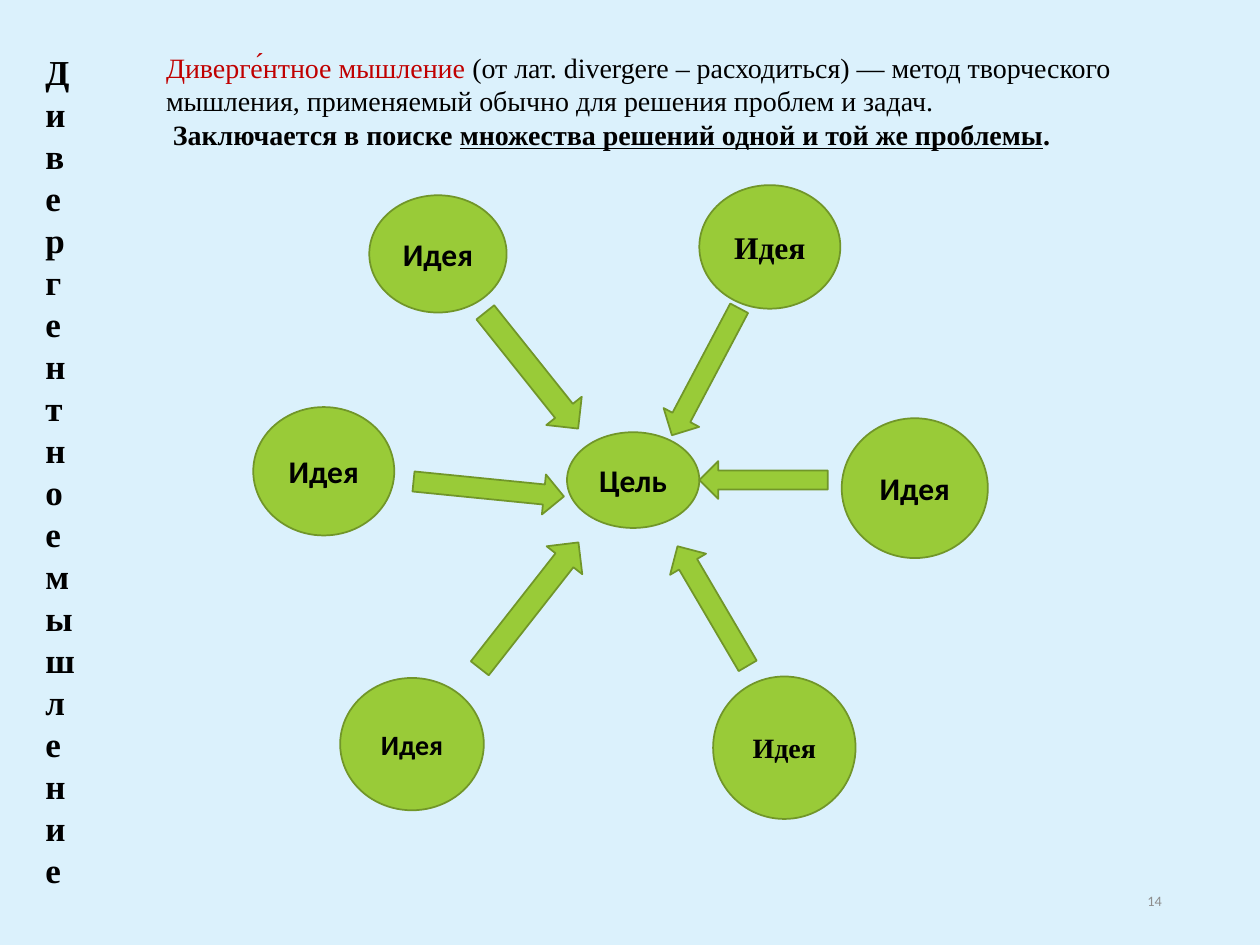
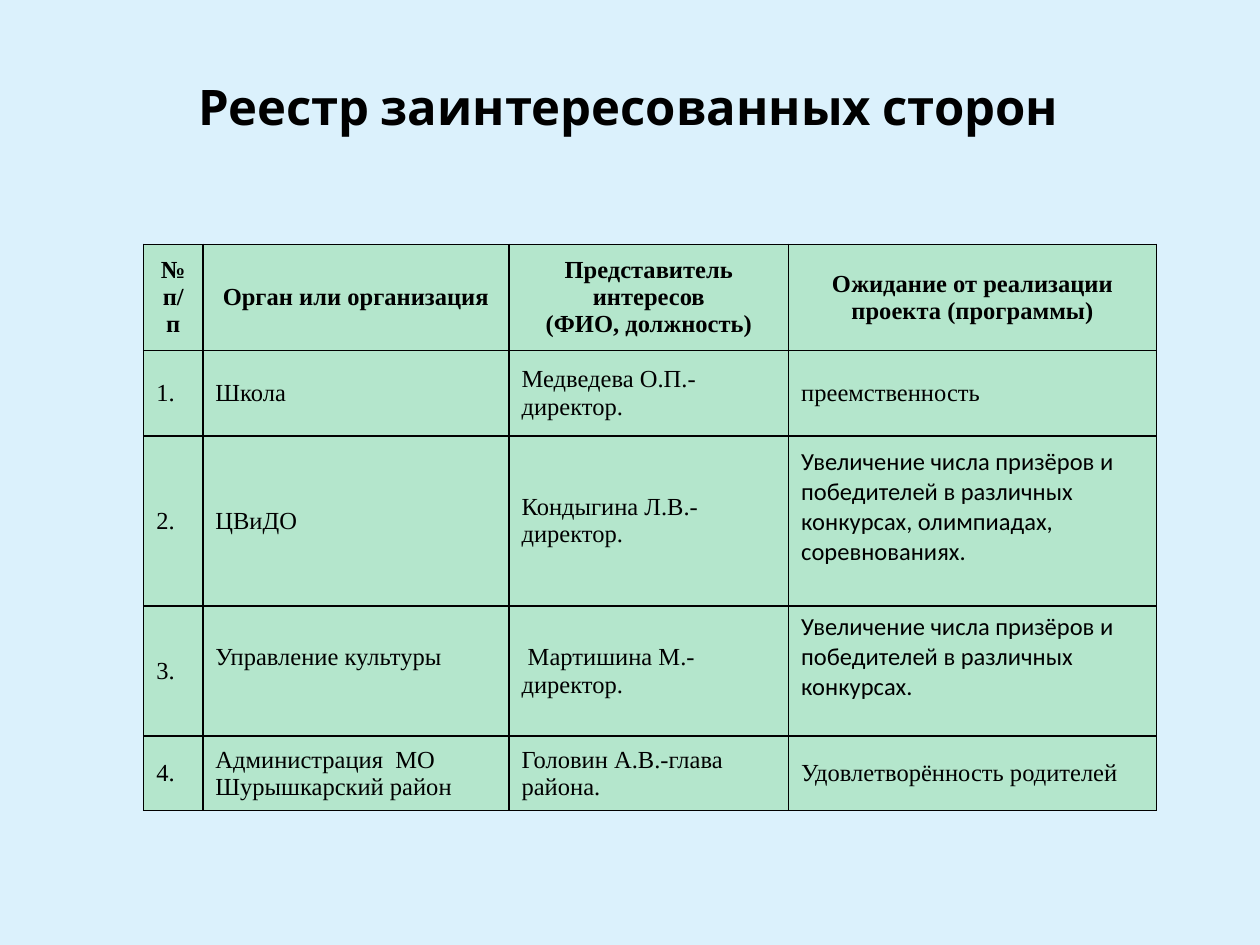
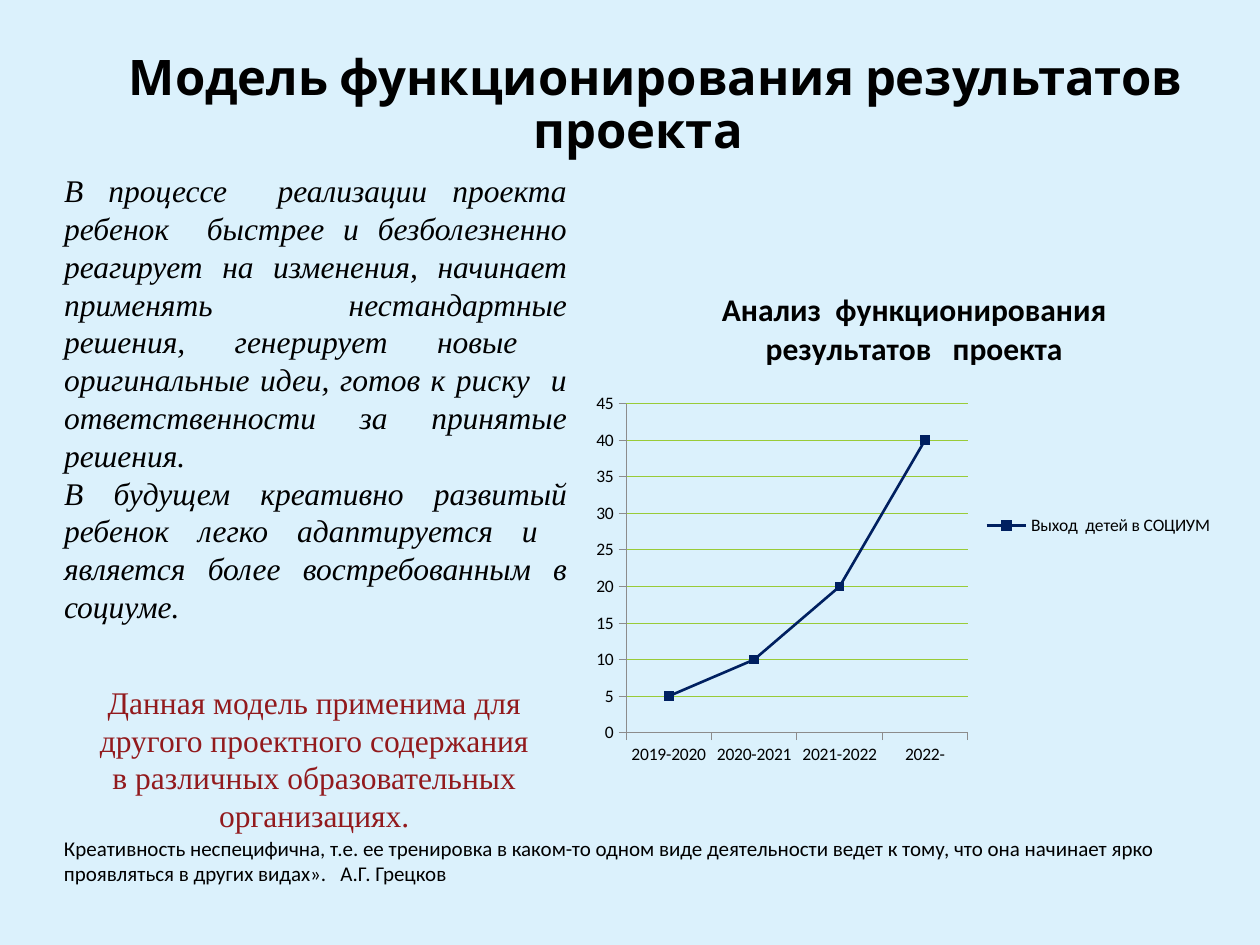
from lxml.etree import SubElement
from pptx import Presentation
from pptx.chart.data import CategoryChartData
from pptx.dml.color import RGBColor
from pptx.enum.chart import XL_CHART_TYPE, XL_LEGEND_POSITION, XL_MARKER_STYLE, XL_TICK_MARK
from pptx.enum.shapes import MSO_SHAPE
from pptx.enum.text import MSO_ANCHOR, MSO_AUTO_SIZE, PP_ALIGN
from pptx.oxml import parse_xml
from pptx.oxml.ns import nsdecls, qn
from pptx.util import Pt

COLORS = {
    "background": "DBF1FC",
    "text": "000000",
    "number": "8C8C8C",
    "term": "C00000",
    "conclusion": "921A1D",
    "green": "99CB38",
    "outline": "719629",
    "cell": "B4E6CC",
    "series": "002060",
}
SERIF = "Times New Roman"
SANS = "Calibri"
TITLE_FONT = "Cabin"
TITLE_ONLY = 5

GOAL = (324, 247, 75.6, 54.7)
IDEAS = [
    (194.4, 387.4, 82.1, 75.6, 16, SANS),
    (407.5, 386.6, 81.4, 81.4, 16, SERIF),
    (481, 239, 83.5, 79.9, 18, SANS),
    (211, 111.6, 78.5, 67, 18, SANS),
    (399.6, 105.8, 80.6, 70.6, 18, SERIF),
    (144.7, 232.6, 80.6, 73.4, 18, SANS),
]
ARROWS = [
    (267.8, 236.2, 23, 86.4, 275.7),
    (290.9, 169.2, 25.9, 85, 321.4),
    (395.3, 306.7, 23.8, 79.2, 149.6),
    (289.4, 300.2, 25.9, 91.4, 218.1),
    (425.5, 237.6, 21.6, 73.4, 90),
    (391.7, 171.4, 23, 82.1, 27.9),
]

COLUMN_WIDTHS = [33.8, 175, 159.8, 210.2]
ROW_HEIGHTS = [60.5, 49, 97.2, 74.2, 42.5]
REGISTER = [
    ["№\nп/п", "Орган или организация",
     "Представитель интересов\v(ФИО, должность)",
     "Ожидание от реализации проекта (программы)"],
    ["1.", "Школа", "Медведева О.П.-директор.", "преемственность"],
    ["2.", "ЦВиДО", "Кондыгина Л.В.-директор.",
     "Увеличение числа призёров и победителей в различных конкурсах, "
     "олимпиадах, соревнованиях."],
    ["3.", "Управление культуры", " Мартишина М.-директор.",
     "Увеличение числа призёров и победителей в различных конкурсах."],
    ["4.", "Администрация  МО Шурышкарский район",
     "Головин А.В.-глава района.", "Удовлетворённость родителей"],
]
SANS_CELLS = {(2, 3), (3, 3)}
RAISED_CELLS = SANS_CELLS | {(3, 1)}


def rgb(name):
    return RGBColor.from_string(COLORS[name])


def format_font(font, size=18, name=SANS, color="text", bold=False, italic=False, underline=False):
    font.size = Pt(size)
    font.name = name
    font.color.rgb = rgb(color)
    font.bold = bold
    font.italic = italic
    font.underline = underline


def write_text(frame, paragraphs, align=PP_ALIGN.LEFT, anchor=MSO_ANCHOR.TOP,
               spacing=1.0, indent=0, **font_format):
    frame.word_wrap = True
    frame.vertical_anchor = anchor
    for index, runs in enumerate(paragraphs):
        paragraph = frame.paragraphs[0] if index == 0 else frame.add_paragraph()
        paragraph.alignment = align
        paragraph.line_spacing = spacing
        if indent:
            properties = paragraph._p.get_or_add_pPr()
            properties.set("marL", "0")
            properties.set("indent", str(Pt(indent)))
        for text, changes in ([(runs, {})] if isinstance(runs, str) else runs):
            for line, part in enumerate(text.split("\v")):
                if line:
                    paragraph.add_line_break()
                run = paragraph.add_run()
                run.text = part
                format_font(run.font, **{**font_format, **changes})


def add_text(slide, box, paragraphs, **text_format):
    shape = slide.shapes.add_textbox(*map(Pt, box))
    write_text(shape.text_frame, paragraphs, **text_format)


def set_title(slide, box, text, **text_format):
    title = slide.shapes.title
    title.left, title.top, title.width, title.height = map(Pt, box)
    title.text_frame.auto_size = MSO_AUTO_SIZE.NONE
    defaults = dict(size=28, name=TITLE_FONT, bold=True, align=PP_ALIGN.CENTER,
                    anchor=MSO_ANCHOR.BOTTOM, spacing=0.9)
    write_text(title.text_frame, [text], **{**defaults, **text_format})


def add_green_shape(slide, kind, box, rotation=0):
    shape = slide.shapes.add_shape(kind, *map(Pt, box))
    shape.rotation = rotation
    shape.shadow.inherit = False
    shape.fill.solid()
    shape.fill.fore_color.rgb = rgb("green")
    shape.line.color.rgb = rgb("outline")
    shape.line.width = Pt(1)
    return shape


def add_circle(slide, box, text, **text_format):
    shape = add_green_shape(slide, MSO_SHAPE.FLOWCHART_CONNECTOR, box)
    write_text(shape.text_frame, [text], align=PP_ALIGN.CENTER,
               anchor=MSO_ANCHOR.MIDDLE, bold=True, **text_format)


def style_cell(cell):
    properties = cell._tc.get_or_add_tcPr()
    for side in ("lnL", "lnR", "lnT", "lnB"):
        properties.append(parse_xml(
            f'<a:{side} {nsdecls("a")} w="{Pt(1)}"><a:solidFill>'
            f'<a:srgbClr val="{COLORS["text"]}"/></a:solidFill></a:{side}>'))
    cell.fill.solid()
    cell.fill.fore_color.rgb = rgb("cell")


def add_register(slide, left, top):
    table = slide.shapes.add_table(
        len(REGISTER), len(COLUMN_WIDTHS), Pt(left), Pt(top),
        Pt(sum(COLUMN_WIDTHS)), Pt(sum(ROW_HEIGHTS))).table
    for column, width in zip(table.columns, COLUMN_WIDTHS):
        column.width = Pt(width)
    for row, height in zip(table.rows, ROW_HEIGHTS):
        row.height = Pt(height)
    for row_index, row in enumerate(REGISTER):
        header = row_index == 0
        for column_index, text in enumerate(row):
            position = (row_index, column_index)
            cell = table.cell(*position)
            style_cell(cell)
            write_text(cell.text_frame, text.split("\n"), size=14, bold=header,
                       name=SANS if position in SANS_CELLS else SERIF,
                       align=PP_ALIGN.CENTER if header else PP_ALIGN.LEFT)
            cell.vertical_anchor = MSO_ANCHOR.MIDDLE
            if position in RAISED_CELLS:
                cell.margin_bottom = Pt(19.6)


def place_chart_part(element, index, **settings):
    for old_layout in element.findall(qn("c:layout")):
        element.remove(old_layout)
    layout = parse_xml(f'<c:layout {nsdecls("c")}/>')
    element.insert(index, layout)
    manual = SubElement(layout, qn("c:manualLayout"))
    for tag, value in settings.items():
        SubElement(manual, qn(f"c:{tag}")).set("val", str(value))


def add_outcome_chart(slide, box):
    data = CategoryChartData()
    data.categories = ["2019-2020", "2020-2021", "2021-2022", "2022-"]
    data.add_series("Выход  детей в СОЦИУМ", [5, 10, 20, 40])
    chart = slide.shapes.add_chart(XL_CHART_TYPE.LINE_MARKERS, *map(Pt, box), data).chart
    format_font(chart.font, size=10)
    chart.has_title = True
    title = chart.chart_title
    write_text(title.text_frame, ["Анализ  функционирования результатов   проекта"],
               align=PP_ALIGN.CENTER, bold=True)
    title.include_in_layout = False
    chart.has_legend = True
    chart.legend.position = XL_LEGEND_POSITION.RIGHT
    chart.legend.include_in_layout = False
    place_chart_part(title._element, 1, xMode="edge", yMode="edge", x=0.21, y=0.02)
    place_chart_part(chart._chartSpace.chart.plotArea, 0, layoutTarget="inner",
                     xMode="edge", yMode="edge", x=0.07, y=0.26, w=0.53, h=0.65)

    for axis in (chart.category_axis, chart.value_axis):
        axis.major_tick_mark = XL_TICK_MARK.OUTSIDE
        axis.format.line.color.rgb = rgb("number")
        axis.format.line.width = Pt(0.5)
    value_axis = chart.value_axis
    value_axis.minimum_scale = 0
    value_axis.maximum_scale = 45
    value_axis.major_unit = 5
    value_axis.major_gridlines.format.line.color.rgb = rgb("green")
    value_axis.major_gridlines.format.line.width = Pt(0.5)

    chart.plots[0].vary_by_categories = False
    series = chart.plots[0].series[0]
    series.smooth = False
    series.format.line.color.rgb = rgb("series")
    series.format.line.width = Pt(1.5)
    series.marker.style = XL_MARKER_STYLE.SQUARE
    series.marker.size = 5
    series.marker.format.fill.solid()
    series.marker.format.fill.fore_color.rgb = rgb("series")
    series.marker.format.line.color.rgb = rgb("series")


def build_divergent_thinking(slide):
    set_title(slide, (18.7, 25.2, 29.5, 493.9), "Дивергентное мышление", size=20, name=SERIF,
              align=PP_ALIGN.LEFT, anchor=MSO_ANCHOR.TOP, spacing=1.0)
    add_text(slide, (509, 500.4, 162, 28.8), ["14"], size=8.2, color="number",
             align=PP_ALIGN.RIGHT, anchor=MSO_ANCHOR.MIDDLE)
    add_text(slide, (87.8, 25.2, 601.2, 85), [
        [("Диверге́нтное мышление ", {"color": "term"}),
         ("(от лат. divergere – расходиться) — метод творческого мышления, "
          "применяемый обычно для решения проблем и задач.", {})],
        [(" Заключается в поиске ", {"bold": True}),
         ("множества решений одной и той же проблемы", {"bold": True, "underline": True}),
         (".", {"bold": True})],
    ], size=16, name=SERIF)
    add_circle(slide, GOAL, "Цель")
    for *box, rotation in ARROWS:
        add_green_shape(slide, MSO_SHAPE.DOWN_ARROW, box, rotation)
    for *box, size, font_name in IDEAS:
        add_circle(slide, box, "Идея", size=size, name=font_name)


def build_stakeholders(slide):
    set_title(slide, (69, 8.6, 579.6, 72.7), "Реестр заинтересованных сторон")
    add_register(slide, 82.1, 139.7)


def build_results_model(slide):
    set_title(slide, (29.5, 13, 670.3, 81.4),
              "Модель функционирования результатов проекта", indent=20)
    add_text(slide, (29.5, 94.3, 301.7, 269.3), [
        "В процессе  реализации проекта ребенок  быстрее и безболезненно реагирует на "
        "изменения, начинает применять нестандартные решения, генерирует новые  "
        "оригинальные идеи, готов к риску  и ответственности за принятые решения.",
        "В будущем креативно развитый ребенок легко адаптируется и  является более "
        "востребованным в социуме.",
    ], name=SERIF, italic=True, align=PP_ALIGN.JUSTIFY)
    add_text(slide, (44.6, 386.6, 270, 116.6), [
        "Данная модель применима для другого проектного содержания "
        "в различных образовательных организациях.",
    ], name=SERIF, color="conclusion", align=PP_ALIGN.CENTER)
    add_outcome_chart(slide, (331.9, 155.5, 368.6, 289.4))
    add_text(slide, (29.5, 473.8, 666.7, 36), [
        "Креативность неспецифична, т.е. ее тренировка в каком-то одном виде деятельности "
        "ведет к тому, что она начинает ярко проявляться в других видах».   А.Г. Грецков",
    ], size=12)


def main():
    presentation = Presentation()
    presentation.slide_width = Pt(720)
    presentation.slide_height = Pt(540)
    background = presentation.slide_master.background.fill
    background.solid()
    background.fore_color.rgb = rgb("background")
    for build in (build_divergent_thinking, build_stakeholders, build_results_model):
        build(presentation.slides.add_slide(presentation.slide_layouts[TITLE_ONLY]))
    presentation.save("out.pptx")


if __name__ == "__main__":
    main()
